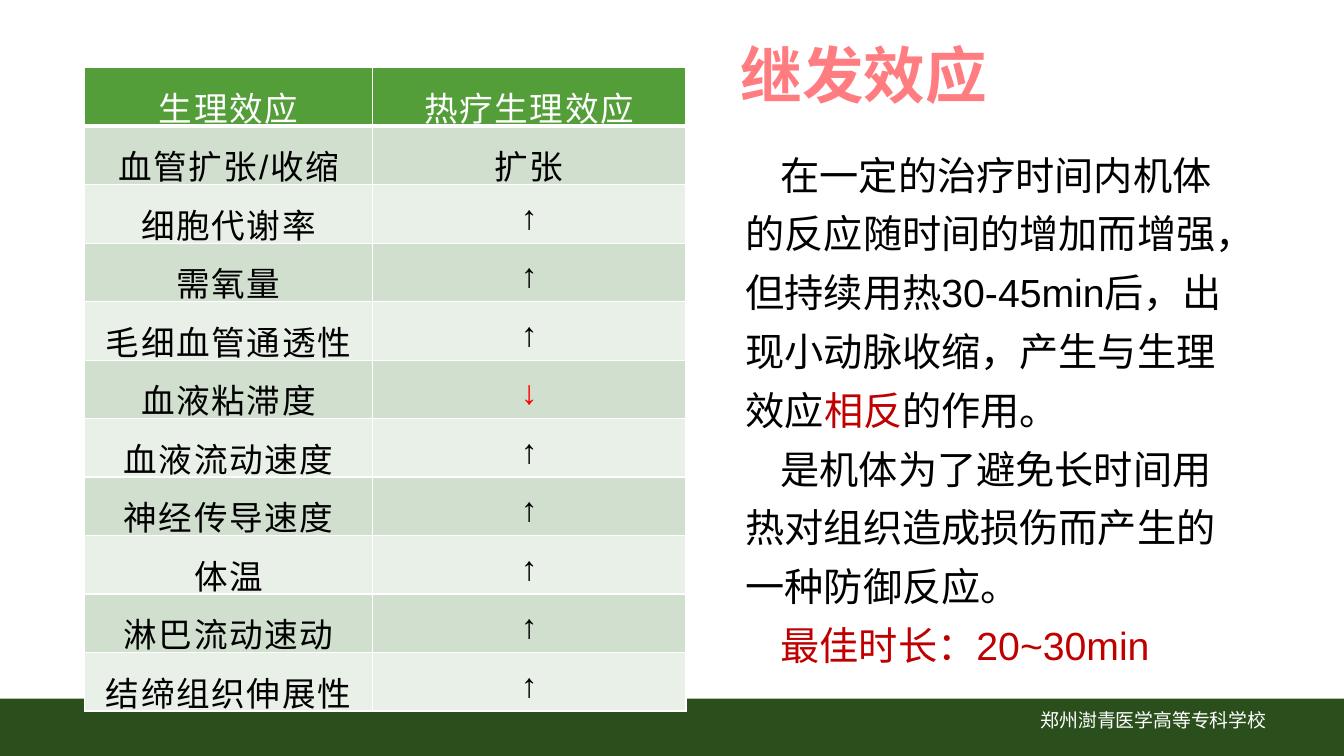
from dataclasses import dataclass

import pptx
import pptx.dml.color
import pptx.enum.shapes
import pptx.enum.text
import pptx.oxml
import pptx.oxml.ns
import pptx.util

Pt = pptx.util.Pt
ALIGN = pptx.enum.text.PP_ALIGN
ANCHOR = pptx.enum.text.MSO_ANCHOR


@dataclass(frozen=True)
class Theme:
    font: str = "Arial"
    footer_font: str = "Noto Sans CJK SC"
    white: str = "FFFFFF"
    black: str = "000000"
    footer_fill: str = "2A4F1C"
    header_fill: str = "549E39"
    bands: tuple = ("D1DFCE", "E9F0E8")
    title: str = "FF7C80"
    accent: str = "C00000"
    decrease: str = "FF0000"
    title_size: float = 44
    body_size: float = 28
    table_size: float = 24
    footer_size: float = 13.5


THEME = Theme()

EFFECTS = [
    ("生理效应", "热疗生理效应"),
    ("血管扩张/收缩", "扩张"),
    ("细胞代谢率", "↑"),
    ("需氧量", "↑"),
    ("毛细血管通透性", "↑"),
    ("血液粘滞度", "↓"),
    ("血液流动速度", "↑"),
    ("神经传导速度", "↑"),
    ("体温", "↑"),
    ("淋巴流动速动", "↑"),
    ("结缔组织伸展性", "↑"),
]

# Each paragraph is a list of (text, colour) spans
BODY = [
    [
        ("在一定的治疗时间内机体的反应随时间的增加而增强，但持续用热30-45min后，"
         "出现小动脉收缩，产生与生理效应", THEME.black),
        ("相反", THEME.accent),
        ("的作用。", THEME.black),
    ],
    [("是机体为了避免长时间用热对组织造成损伤而产生的一种防御反应。", THEME.black)],
    [("最佳时长：20~30min", THEME.accent)],
]


def rgb(colour):
    return pptx.dml.color.RGBColor.from_string(colour)


def style_paragraph(para, size, colour=None, font=THEME.font, bold=False):
    para.font.name = font
    para.font.size = Pt(size)
    para.font.bold = bold
    if colour:
        para.font.color.rgb = rgb(colour)


def add_text_box(page, left, top, width, height, wrap=True, grow=False):
    box = page.shapes.add_textbox(Pt(left), Pt(top), Pt(width), Pt(height))
    box.text_frame.word_wrap = wrap
    if grow:
        box.text_frame.auto_size = pptx.enum.text.MSO_AUTO_SIZE.SHAPE_TO_FIT_TEXT
    return box.text_frame


def add_label(page, text, place, size, colour, font=THEME.font, bold=False, **options):
    para = add_text_box(page, *place, **options).paragraphs[0]
    para.text = text
    para.alignment = ALIGN.CENTER
    style_paragraph(para, size, colour, font, bold)


def add_band(page, left, top, width, height, colour):
    band = page.shapes.add_shape(
        pptx.enum.shapes.MSO_SHAPE.RECTANGLE, Pt(left), Pt(top), Pt(width), Pt(height))
    band.shadow.inherit = False
    band.fill.solid()
    band.fill.fore_color.rgb = rgb(colour)
    band.line.fill.background()


def add_body(page, paragraphs, place):
    frame = add_text_box(page, *place, grow=True)
    for index, spans in enumerate(paragraphs):
        para = frame.paragraphs[0] if index == 0 else frame.add_paragraph()
        para.line_spacing = 1.25
        para._p.get_or_add_pPr().set("indent", str(Pt(25)))
        style_paragraph(para, THEME.body_size)
        for text, colour in spans:
            span = para.add_run()
            span.text = text
            span.font.color.rgb = rgb(colour)


def set_borders(cell, bottom_width):
    properties = cell._tc.get_or_add_tcPr()
    namespace = pptx.oxml.ns.nsdecls("a")
    widths = {"lnL": 1, "lnR": 1, "lnT": 1, "lnB": bottom_width}
    for position, (side, width) in enumerate(widths.items()):
        properties.insert(position, pptx.oxml.parse_xml(
            f'<a:{side} {namespace} w="{Pt(width)}"><a:solidFill>'
            f'<a:srgbClr val="{THEME.white}"/></a:solidFill></a:{side}>'))


def fill_cell(cell, text, fill, colour, bottom_width):
    cell.fill.solid()
    cell.fill.fore_color.rgb = rgb(fill)
    cell.vertical_anchor = ANCHOR.MIDDLE
    set_borders(cell, bottom_width)
    para = cell.text_frame.paragraphs[0]
    para.text = text
    para.alignment = ALIGN.CENTER
    para.line_spacing = 1.2
    style_paragraph(para, THEME.table_size, colour)
    # Letter spacing in hundredths of a point
    para._p.pPr.get_or_add_defRPr().set("spc", "120")


def add_effect_table(page, rows, left, top, column_widths, row_height):
    table = page.shapes.add_table(
        len(rows), len(column_widths), Pt(left), Pt(top),
        Pt(sum(column_widths)), Pt(row_height * len(rows))).table
    for column, width in zip(table.columns, column_widths):
        column.width = Pt(width)
    for row_index, texts in enumerate(rows):
        table.rows[row_index].height = Pt(row_height)
        header = row_index == 0
        fill = THEME.header_fill if header else THEME.bands[(row_index - 1) % 2]
        for column_index, text in enumerate(texts):
            colour = THEME.white if header else THEME.black
            if text == "↓":
                colour = THEME.decrease
            fill_cell(table.cell(row_index, column_index), text, fill, colour,
                      3 if header else 1)


def main():
    deck = pptx.Presentation()
    deck.slide_width, deck.slide_height = Pt(960), Pt(540)
    page = deck.slides.add_slide(deck.slide_layouts[6])

    # Footer
    add_band(page, 0, 499, 960, 42, THEME.footer_fill)
    add_label(page, "郑州澍青医学高等专科学校", (687.6, 502.6, 272.9, 33),
              THEME.footer_size, THEME.white, font=THEME.footer_font)

    # Title and explanation
    add_label(page, "继发效应", (520.6, 23, 193, 60.5), THEME.title_size,
              THEME.title, bold=True, wrap=False, grow=True)
    add_body(page, BODY, (525.6, 95.8, 368, 383))

    # Table of effects
    add_effect_table(page, EFFECTS, 60.5, 48.3, (205.5, 224), 39)

    deck.save("out.pptx")


if __name__ == "__main__":
    main()
